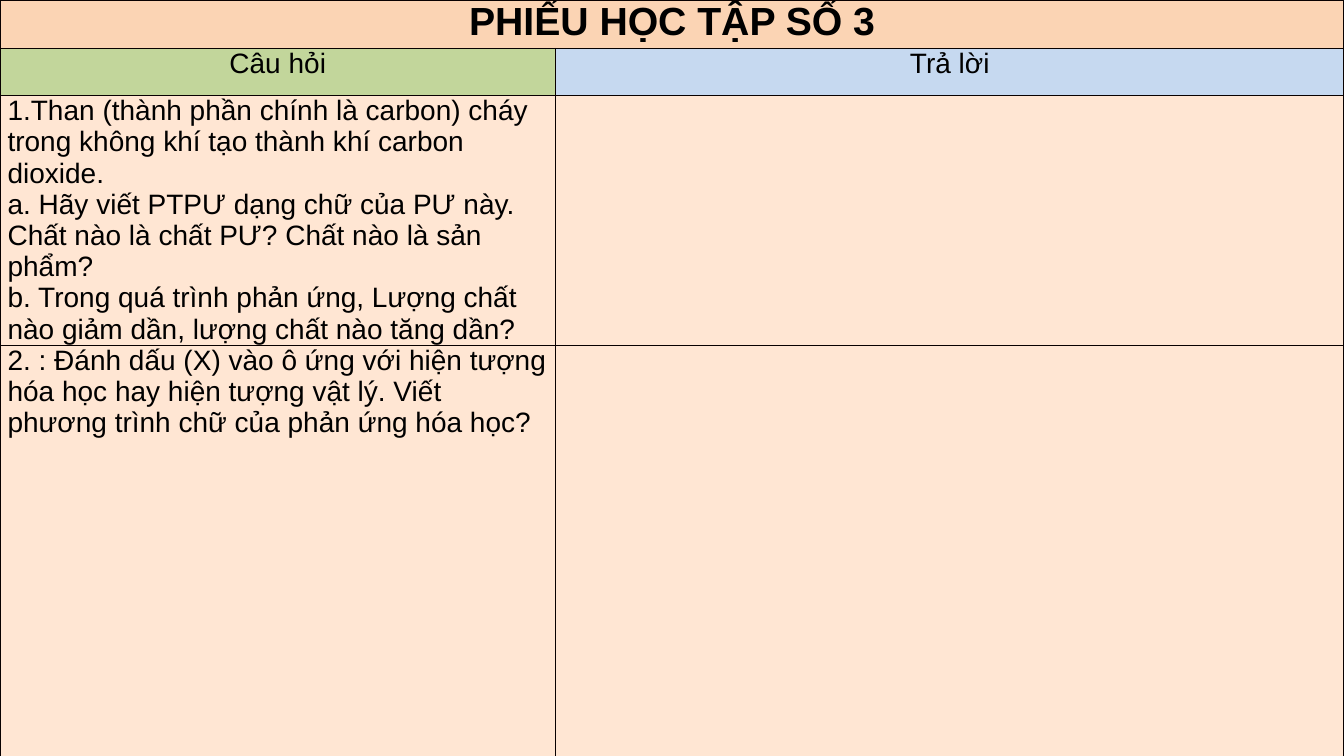
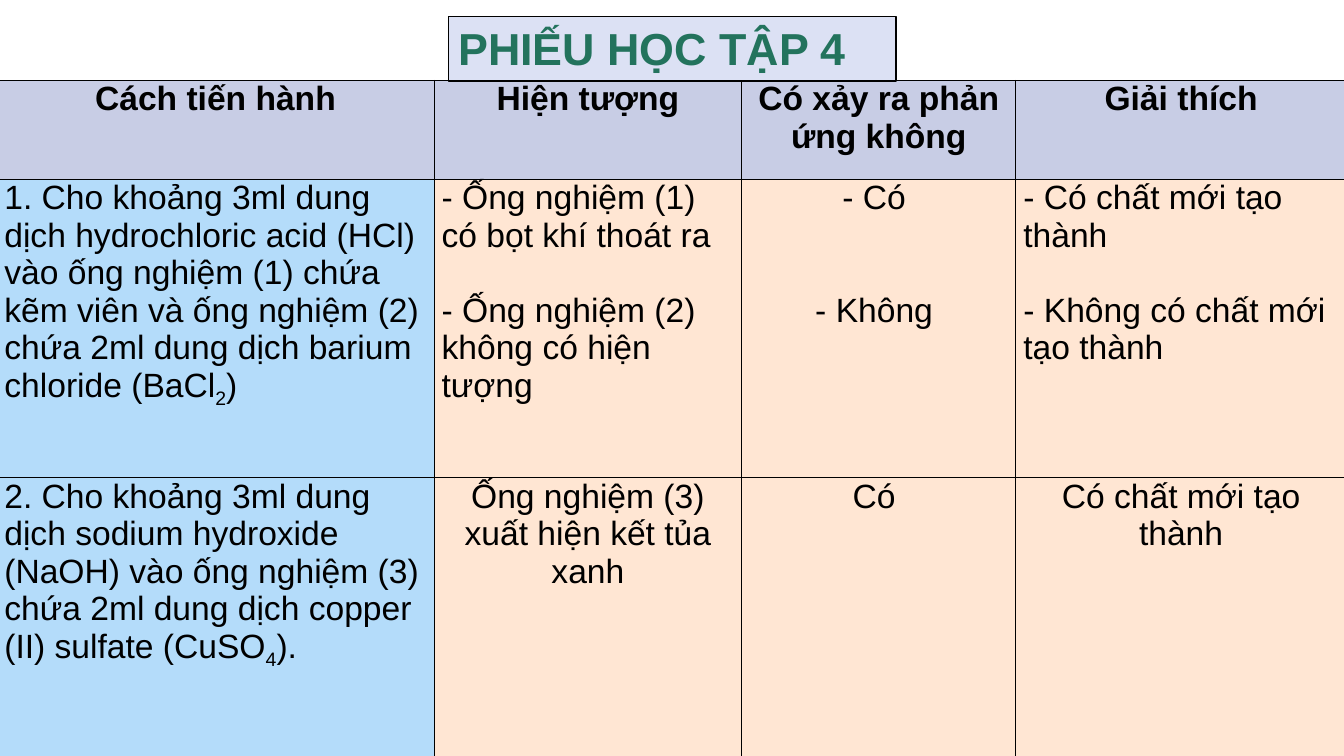
from lxml import etree
from pptx import Presentation
from pptx.dml.color import RGBColor
from pptx.enum.shapes import MSO_SHAPE
from pptx.enum.text import MSO_ANCHOR, PP_ALIGN
from pptx.oxml.ns import qn
from pptx.util import Cm, Pt

LEFT, CENTER = PP_ALIGN.LEFT, PP_ALIGN.CENTER
TOP = MSO_ANCHOR.TOP
RECTANGLE = MSO_SHAPE.RECTANGLE

# Shared style
FONT = "Arial"
BLACK, BORDER = "000000", "080000"
PEACH, ORANGE, GREEN, BLUE = "FFE6D3", "FBD4B4", "C2D69B", "C6D9F0"
LAVENDER, SKY, PALE, TEAL = "C8CDE5", "B4DCFA", "DCE1F4", "23735D"
LINE_WIDTH = Pt(1)
CELL_INSET = Cm(0.19)
BLANK_LINE = 27  # points, one line of 24 pt text

# Content: each cell is (fill, alignment, paragraphs);
# a paragraph is text, or a list of text and subscript parts in turn
SHEET_3 = [
    [(ORANGE, CENTER, ["PHIẾU HỌC TẬP SỐ 3"]), (ORANGE, CENTER, [])],
    [(GREEN, CENTER, ["Câu hỏi"]), (BLUE, CENTER, ["Trả lời"])],
    [(PEACH, LEFT, [
        "1.Than (thành phần chính là carbon) cháy trong không khí tạo thành "
        "khí carbon dioxide.",
        "a. Hãy viết PTPƯ dạng chữ của PƯ này. Chất nào là chất PƯ? "
        "Chất nào là sản phẩm?",
        "b. Trong quá trình phản ứng, Lượng chất nào giảm dần, lượng chất nào "
        "tăng dần?"]),
     (PEACH, LEFT, [])],
    [(PEACH, LEFT, [
        "2. : Đánh dấu (X) vào ô ứng với hiện tượng hóa học hay hiện tượng "
        "vật lý. Viết phương trình chữ của phản ứng hóa học?"]),
     (PEACH, LEFT, [])],
]
SHEET_4_TITLE = "PHIẾU HỌC TẬP 4"
SHEET_4_HEADINGS = ["Cách tiến hành", "Hiện tượng", "Có xảy ra phản ứng không",
                    "Giải thích"]
SHEET_4 = [
    [(LAVENDER, CENTER, [heading]) for heading in SHEET_4_HEADINGS],
    [(SKY, LEFT, [[
        "1. Cho khoảng 3ml dung dịch hydrochloric acid (HCl) vào ống nghiệm (1) "
        "chứa kẽm viên và ống nghiệm (2) chứa 2ml dung dịch barium chloride "
        "(BaCl", "2", ")"]]),
     (PEACH, LEFT, ["- Ống nghiệm (1) có bọt khí thoát ra",
                    "- Ống nghiệm (2) không có hiện tượng"]),
     (PEACH, CENTER, ["- Có ", "- Không "]),
     (PEACH, LEFT, ["- Có chất mới tạo thành",
                    "- Không có chất mới tạo thành"])],
    [(SKY, LEFT, [[
        "2. Cho khoảng 3ml dung dịch sodium hydroxide (NaOH) vào ống nghiệm (3) "
        "chứa 2ml dung dịch copper (II) sulfate (CuSO", "4", ")."]]),
     (PEACH, CENTER, ["Ống nghiệm (3) xuất hiện kết tủa xanh"]),
     (PEACH, CENTER, ["Có "]),
     (PEACH, CENTER, ["Có chất mới tạo thành"])],
]
# Blank lines between the two answers, by column of the second row
ANSWER_GAPS = {1: 1, 2: 2, 3: 1}


def color(value):
    return RGBColor.from_string(value)


def set_font(para, size, bold=False, ink=BLACK):
    font = para.font
    font.name, font.size, font.bold = FONT, Pt(size), bold
    font.color.rgb = color(ink)


def set_borders(cell, ink):
    properties = cell._tc.get_or_add_tcPr()
    for index, side in enumerate("LRTB"):
        line = etree.Element(qn(f"a:ln{side}"), w=str(LINE_WIDTH))
        fill = etree.SubElement(line, qn("a:solidFill"))
        etree.SubElement(fill, qn("a:srgbClr"), val=ink)
        properties.insert(index, line)


def fill_cell(cell, content, size, bold, ink, gap=0):
    fill, align, paragraphs = content
    cell.fill.solid()
    cell.fill.fore_color.rgb = color(fill)
    set_borders(cell, ink)
    cell.margin_left = cell.margin_right = CELL_INSET
    cell.margin_top = cell.margin_bottom = 0
    frame = cell.text_frame
    for index, parts in enumerate(paragraphs):
        para = frame.add_paragraph() if index else frame.paragraphs[0]
        para.alignment = align
        if index and gap:
            para.space_before = Pt(gap)
        set_font(para, size, bold)
        parts = [parts] if isinstance(parts, str) else parts
        for position, part in enumerate(parts):
            span = para.add_run()
            span.text = part
            if position % 2:
                span._r.get_or_add_rPr().set("baseline", "-25000")


def add_sheet(page, left, top, widths, heights, rows, sizes, bold_rows, ink,
              gaps=None):
    """Add a table; sizes holds the text size of each row."""
    table = page.shapes.add_table(
        len(rows), len(widths), Cm(left), Cm(top),
        Cm(sum(widths)), Cm(sum(heights))).table
    table.first_row = table.horz_banding = False
    for column, width in zip(table.columns, widths):
        column.width = Cm(width)
    for row, height in zip(table.rows, heights):
        row.height = Cm(height)
    for r, row in enumerate(rows):
        for c, content in enumerate(row):
            gap = (gaps or {}).get(c, 0) * BLANK_LINE
            fill_cell(table.cell(r, c), content, sizes[r], r in bold_rows,
                      ink, gap)
    return table


def add_title(page, text):
    box = page.shapes.add_shape(RECTANGLE, Cm(11.3), Cm(0.41), Cm(11.28), Cm(1.63))
    box.shadow.inherit = False
    box.fill.solid()
    box.fill.fore_color.rgb = color(PALE)
    box.line.color.rgb = color(BLACK)
    box.line.width = LINE_WIDTH
    frame = box.text_frame
    frame.vertical_anchor = TOP
    para = frame.paragraphs[0]
    para.alignment = LEFT
    set_font(para, 32, True, TEAL)
    para.add_run().text = text


def main():
    deck = Presentation()
    deck.slide_width, deck.slide_height = Cm(33.87), Cm(19.05)
    blank = deck.slide_layouts[6]

    # Worksheet 3: questions and room for answers
    page = deck.slides.add_slide(blank)
    table = add_sheet(page, 0, 0, [14, 19.87], [1.22, 1.18, 6.17, 10.46],
                      SHEET_3, [28, 20, 20, 20], {0}, BORDER)
    table.cell(0, 0).merge(table.cell(0, 1))

    # Worksheet 4: experiments and results
    page = deck.slides.add_slide(blank)
    add_sheet(page, -0.08, 2.03, [11.02, 7.75, 6.91, 8.33], [2.49, 7.52, 7.04],
              SHEET_4, [24] * 3, {0}, BLACK, ANSWER_GAPS)
    add_title(page, SHEET_4_TITLE)

    deck.save("out.pptx")


if __name__ == "__main__":
    main()
